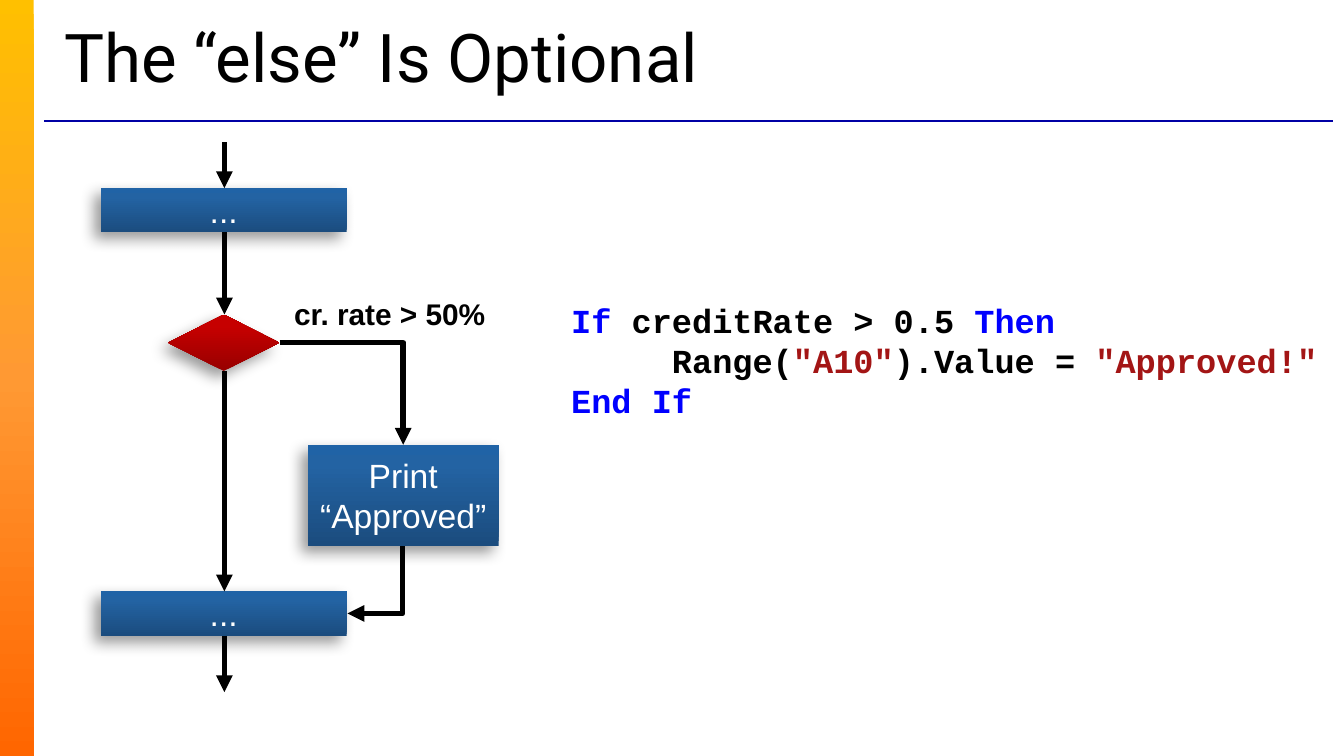
from dataclasses import dataclass

from lxml import etree
from pptx import Presentation
from pptx.dml.color import RGBColor
from pptx.enum.shapes import MSO_CONNECTOR, MSO_SHAPE
from pptx.enum.text import MSO_ANCHOR, PP_ALIGN
from pptx.oxml.ns import qn
from pptx.util import Inches, Pt

STRAIGHT, ELBOW = MSO_CONNECTOR.STRAIGHT, MSO_CONNECTOR.ELBOW
RECTANGLE = MSO_SHAPE.RECTANGLE
PROCESS, DECISION = MSO_SHAPE.FLOWCHART_PROCESS, MSO_SHAPE.FLOWCHART_DECISION
MIDDLE, CENTER = MSO_ANCHOR.MIDDLE, PP_ALIGN.CENTER


@dataclass(frozen=True)
class Theme:
    black: str = "000000"
    white: str = "FFFFFF"
    rule: str = "0000A5"
    keyword: str = "0000FF"
    string: str = "A31515"
    orange_stops: tuple = ((0, "FFC000"), (50, "FF9933"), (100, "FF6600"))
    blue_stops: tuple = ((0, "1B4C7E"), (80, "2363A3"), (100, "2063A6"))
    red_stops: tuple = ((0, "980000"), (80, "C60000"), (100, "C70000"))
    title_size: int = 36
    body_size: int = 18
    label_size: int = 16


theme = Theme()


def add_gradient_shape(kind, left, top, width, height, stops, angle):
    """Add an unoutlined shape; the gradient angle runs clockwise in degrees."""
    shape = slide.shapes.add_shape(
        kind, Inches(left), Inches(top), Inches(width), Inches(height))
    shape.shadow.inherit = False
    shape.line.fill.background()
    shape.fill.gradient()
    gradient = shape._element.spPr.find(qn("a:gradFill"))
    stop_list = gradient.find(qn("a:gsLst"))
    for stop in list(stop_list):
        stop_list.remove(stop)
    for position, color in stops:
        stop = etree.SubElement(stop_list, qn("a:gs"), pos=str(position * 1000))
        etree.SubElement(stop, qn("a:srgbClr"), val=color)
    gradient.find(qn("a:lin")).set("ang", str(angle * 60000))
    return shape


def add_run(paragraph, text, font_name, size, color, bold=False):
    run = paragraph.add_run()
    run.text = text
    run.font.name = font_name
    run.font.size = Pt(size)
    run.font.bold = bold
    run.font.color.rgb = RGBColor.from_string(color)


presentation = Presentation()
presentation.slide_width = Inches(10)
presentation.slide_height = Inches(10 * 9 / 16)
slide = presentation.slides.add_slide(presentation.slide_layouts[6])

# Side bar, title rule and title
side_bar = add_gradient_shape(RECTANGLE, 0, 0, 0.25, 5.62, theme.orange_stops, 90)
side_bar.height = presentation.slide_height
title_rule = slide.shapes.add_connector(
    STRAIGHT, Inches(0.33), Inches(0.9), Inches(9.92), Inches(0.9))
title_rule.line.color.rgb = RGBColor.from_string(theme.rule)
title_rule.line.width = Pt(0.75)
etree.SubElement(title_rule._element.spPr, qn("a:effectLst"))

title = slide.shapes.add_textbox(
    Inches(0.38), Inches(0.15), Inches(9.58), Inches(0.53)).text_frame
title.word_wrap = True
title.vertical_anchor = MIDDLE
add_run(title.paragraphs[0], "The “else” Is Optional", "Roboto",
        theme.title_size, theme.black)

# Flowchart steps
for kind, left, top, width, height, stops, text in [
    (PROCESS, 0.75, 1.4, 1.83, 0.33, theme.blue_stops, "..."),
    (DECISION, 1.25, 2.34, 0.83, 0.42, theme.red_stops, ""),
    (PROCESS, 2.29, 3.31, 1.42, 0.75, theme.blue_stops, "Print “Approved”"),
    (PROCESS, 0.75, 4.4, 1.83, 0.33, theme.blue_stops, "..."),
]:
    step = add_gradient_shape(kind, left, top, width, height, stops, 270)
    effects = step._element.spPr.find(qn("a:effectLst"))
    shadow = etree.SubElement(
        effects, qn("a:outerShdw"), blurRad=str(Pt(8)), dist=str(Pt(5)),
        dir=str(135 * 60000), algn="tr", rotWithShape="0")
    shadow_color = etree.SubElement(shadow, qn("a:srgbClr"), val=theme.black)
    etree.SubElement(shadow_color, qn("a:alpha"), val="40000")
    if text:
        frame = step.text_frame
        frame.word_wrap = True
        frame.vertical_anchor = MIDDLE
        frame.margin_left = frame.margin_right = Inches(0.05)
        frame.margin_top = frame.margin_bottom = Inches(0.05)
        paragraph = frame.paragraphs[0]
        paragraph.alignment = CENTER
        add_run(paragraph, text, "Arial", theme.body_size, theme.white)

# Flow arrows: an elbow runs across then down before its rotation is applied
axis = 1.67
for kind, x1, y1, x2, y2, rotation in [
    (STRAIGHT, axis, 1.06, axis, 1.4, 0),
    (STRAIGHT, axis, 1.73, axis, 2.34, 0),
    (STRAIGHT, axis, 2.76, axis, 4.4, 0),
    (STRAIGHT, axis, 4.73, axis, 5.15, 0),
    (ELBOW, 2.08, 2.55, 3, 3.31, 0),
    (ELBOW, 2.54, 4.11, 3.04, 4.52, 90),
]:
    arrow = slide.shapes.add_connector(
        kind, Inches(x1), Inches(y1), Inches(x2), Inches(y2))
    arrow.line.color.rgb = RGBColor.from_string(theme.black)
    arrow.line.width = Pt(3)
    properties = arrow._element.spPr
    etree.SubElement(properties.find(qn("a:ln")), qn("a:tailEnd"), type="triangle")
    etree.SubElement(properties, qn("a:effectLst"))
    if kind == ELBOW:
        properties.find(qn("a:prstGeom")).set("prst", "bentConnector2")
        properties.find(qn("a:xfrm")).set("rot", str(rotation * 60000))

condition = slide.shapes.add_textbox(
    Inches(2.09), Inches(2.15), Inches(1.7), Inches(0.37)).text_frame
condition.word_wrap = True
add_run(condition.paragraphs[0], "cr. rate > 50%", "Arial",
        theme.label_size, theme.black, bold=True)

# Code sample
code_lines = [
    [("If", theme.keyword), (" creditRate > 0.5 ", theme.black),
     ("Then", theme.keyword)],
    [("     Range(", theme.black), ('"A10"', theme.string),
     (").Value = ", theme.black), ('"Approved!"', theme.string)],
    [("End If", theme.keyword)],
]
code = slide.shapes.add_textbox(
    Inches(4.25), Inches(2.23), Inches(5.67), Inches(1.51)).text_frame
code.word_wrap = True
code.margin_left = code.margin_right = code.margin_top = code.margin_bottom = 0
for index, line in enumerate(code_lines):
    paragraph = code.add_paragraph() if index else code.paragraphs[0]
    for text, color in line:
        add_run(paragraph, text, "Courier New", theme.body_size, color, bold=True)

presentation.save("out.pptx")
